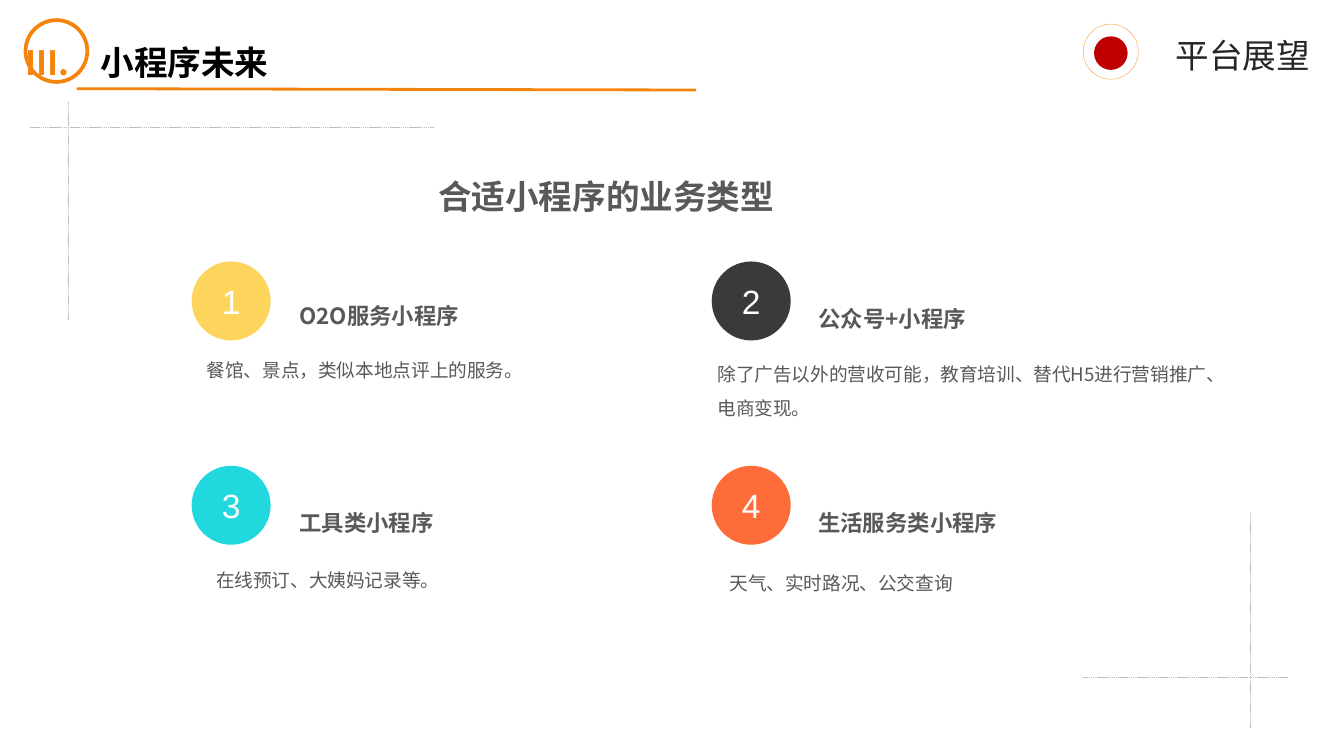
from lxml.etree import SubElement
from pptx import Presentation
from pptx.dml.color import RGBColor
from pptx.enum.dml import MSO_LINE
from pptx.enum.shapes import MSO_CONNECTOR, MSO_SHAPE
from pptx.enum.text import MSO_ANCHOR, MSO_AUTO_SIZE, PP_ALIGN
from pptx.oxml.ns import qn
from pptx.util import Inches, Pt

CJK_FONT = "Noto Sans CJK SC"
ORANGE = "F4840C"
GRAY = "595959"
GUIDE = "BFBFBF"


def color(value):
    """Turn a hex string into a colour."""
    return RGBColor.from_string(value)


def set_font(paragraph, size, value, bold=False, name=CJK_FONT):
    """Set the font of a whole paragraph, East Asian text included."""
    font = paragraph.font
    font.size = Pt(size)
    font.bold = bold
    font.color.rgb = color(value)
    font.name = name
    properties = paragraph._p.pPr.find(qn("a:defRPr"))
    SubElement(properties, qn("a:ea"), typeface=name)


def add_text(slide, box, text, size, value=GRAY, bold=False, spacing=1.5,
             align=PP_ALIGN.LEFT, wrap=True, number_start=None):
    """Add a one-paragraph text box, with a Roman number if one is given."""
    shape = slide.shapes.add_textbox(*map(Inches, box))
    frame = shape.text_frame
    frame.word_wrap = wrap
    frame.auto_size = MSO_AUTO_SIZE.SHAPE_TO_FIT_TEXT
    paragraph = frame.paragraphs[0]
    paragraph.text = text
    paragraph.alignment = align
    paragraph.line_spacing = spacing
    if number_start:
        properties = paragraph._p.get_or_add_pPr()
        properties.set("marL", str(Inches(0.56)))
        properties.set("indent", str(Inches(-0.56)))
        bullet_color = SubElement(properties, qn("a:buClr"))
        SubElement(bullet_color, qn("a:srgbClr"), val=ORANGE)
        SubElement(properties, qn("a:buFont"), typeface="+mj-lt")
        SubElement(properties, qn("a:buAutoNum"), type="romanUcPeriod",
                   startAt=str(number_start))
    set_font(paragraph, size, value, bold)


def add_circle(slide, left, top, diameter, fill=None, line=None, width=2,
               dash=None):
    """Add a circle with an optional fill and outline."""
    box = map(Inches, (left, top, diameter, diameter))
    shape = slide.shapes.add_shape(MSO_SHAPE.OVAL, *box)
    shape.shadow.inherit = False
    if fill:
        shape.fill.solid()
        shape.fill.fore_color.rgb = color(fill)
    else:
        shape.fill.background()
    if line:
        shape.line.color.rgb = color(line)
        shape.line.width = Pt(width)
        if dash:
            shape.line.dash_style = dash
    else:
        shape.line.fill.background()
    return shape


def add_line(slide, start, end, value, width, dash=None):
    """Add a straight line without a shadow."""
    line = slide.shapes.add_connector(
        MSO_CONNECTOR.STRAIGHT, *map(Inches, (*start, *end)))
    line.line.color.rgb = color(value)
    line.line.width = Pt(width)
    if dash:
        line.line.dash_style = dash
    SubElement(line._element.spPr, qn("a:effectLst"))


def add_header(slide, left, top):
    """Add the numbered section title with its ring and underline."""
    add_line(slide, (left + 0.38, top + 0.51), (left + 4.99, top + 0.52),
             ORANGE, 1.5)
    add_circle(slide, left, top, 0.46, line=ORANGE)
    add_text(slide, (left - 0.1, top - 0.19, 6.35, 0.7), "小程序未来", 18,
             "000000", bold=True, spacing=2, number_start=3)


def add_topic(slide, left, top):
    """Add the topic label with its ringed dot."""
    add_text(slide, (left + 0.59, top - 0.12, 1.21, 0.53), "平台展望", 18,
             "262626", wrap=False)
    add_circle(slide, left + 0.08, top + 0.09, 0.25, fill="C00000")
    add_circle(slide, left, top, 0.41, line=ORANGE, width=0.25,
               dash=MSO_LINE.ROUND_DOT)


def add_cross(slide, left, top, width, height, center_x, center_y):
    """Add two dashed guides that cross inside the given box."""
    for start, end in (
        ((left + center_x, top), (left + center_x, top + height)),
        ((left, top + center_y), (left + width, top + center_y)),
    ):
        add_line(slide, start, end, GUIDE, 0.25, MSO_LINE.SQUARE_DOT)


def add_business(slide, left, top, number, fill, heading, heading_box, body,
                 body_box):
    """Add one numbered business type with its heading and description."""
    for text, box, size, bold in ((heading, heading_box, 12, True),
                                  (body, body_box, 10, False)):
        text_left, text_top, width, height = box
        add_text(slide, (left + text_left, top + text_top, width, height),
                 text, size, bold=bold)
    circle = add_circle(slide, left, top, 0.56, fill=fill, line=fill)
    circle.text_frame.vertical_anchor = MSO_ANCHOR.MIDDLE
    paragraph = circle.text_frame.paragraphs[0]
    paragraph.text = str(number)
    paragraph.alignment = PP_ALIGN.CENTER
    set_font(paragraph, 18, "FFFFFF", name="Arial")


def add_businesses(slide, left, top):
    """Lay out the business types in two columns."""
    businesses = [
        ("FDD55C", "O2O服务小程序", (0.69, 0.14, 2.4, 0.4),
         "餐馆、景点，类似本地点评上的服务。", (0, 0.58, 3.29, 0.35)),
        ("3A3A3A", "公众号+小程序", (0.68, 0.16, 2.98, 0.4),
         "除了广告以外的营收可能，教育培训、替代H5进行营销推广、电商变现。",
         (-0.07, 0.61, 3.91, 0.6)),
        ("21D8DE", "工具类小程序", (0.69, 0.16, 2.17, 0.4),
         "在线预订、大姨妈记录等。", (0.07, 0.62, 3.22, 0.35)),
        ("FE6C39", "生活服务类小程序", (0.68, 0.16, 2.2, 0.4),
         "天气、实时路况、公交查询", (0.02, 0.64, 3.78, 0.35)),
    ]
    for index, business in enumerate(businesses):
        row, column = divmod(index, 2)
        add_business(slide, left + column * 3.87, top + row * 1.52,
                     index + 1, *business)


def main():
    """Build the slide and save it."""
    presentation = Presentation()
    presentation.slide_width = Inches(10)
    presentation.slide_height = presentation.slide_width * 9 // 16
    slide = presentation.slides.add_slide(presentation.slide_layouts[6])
    add_header(slide, 0.19, 0.15)
    add_topic(slide, 8.06, 0.18)
    add_cross(slide, 0.22, 0.76, 3.01, 1.62, 0.29, 0.19)
    add_cross(slide, 8.06, 3.81, 1.53, 1.61, 1.24, 1.23)
    add_text(slide, (0.37, 1.11, 8.28, 0.55), "合适小程序的业务类型", 18,
             bold=True, align=PP_ALIGN.CENTER)
    add_businesses(slide, 1.44, 1.96)
    presentation.save("out.pptx")


if __name__ == "__main__":
    main()
